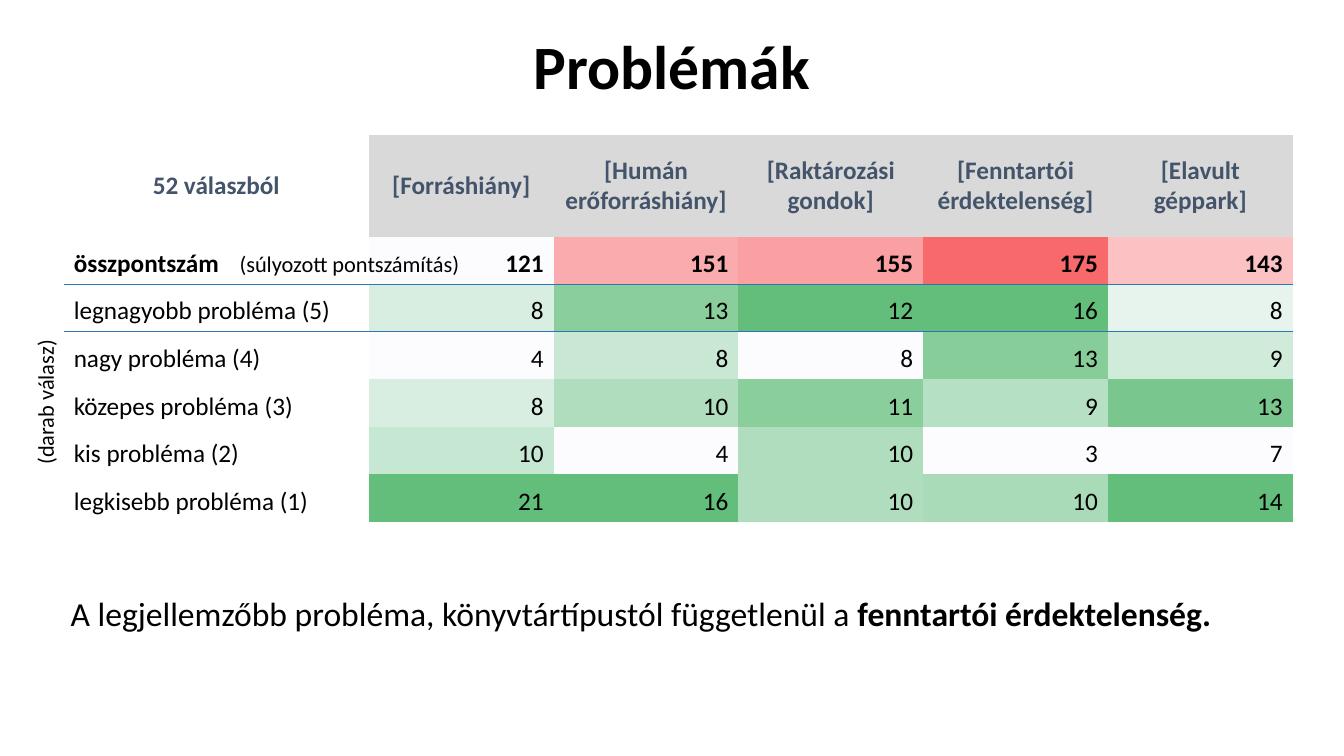
from lxml import etree
from pptx import Presentation
from pptx import util as u
from pptx.dml.color import RGBColor
from pptx.enum import text
from pptx.oxml.ns import qn

PX = 6350  # EMU per px: the page is 1920 x 1080 px
FONT = "Calibri"
BLACK = RGBColor(0x00, 0x00, 0x00)
SLATE = RGBColor(0x44, 0x54, 0x6A)
HEADER_GREY = RGBColor(0xD9, 0xD9, 0xD9)
RULE_BLUE = RGBColor(0x2E, 0x75, 0xB6)
PALE = RGBColor(0xFC, 0xFC, 0xFF)
GREEN = RGBColor(0x63, 0xBE, 0x7B)
RED = RGBColor(0xF8, 0x69, 0x6B)
NO_STYLE_NO_GRID = "{2D5ABB26-0587-4C30-8999-92F81FD0307C}"

LEFT, CENTER, RIGHT = text.PP_ALIGN.LEFT, text.PP_ALIGN.CENTER, text.PP_ALIGN.RIGHT
MIDDLE, BOTTOM = text.MSO_ANCHOR.MIDDLE, text.MSO_ANCHOR.BOTTOM

HEADINGS = ["52 válaszból", "[Forráshiány]", "[Humán erőforráshiány]",
            "[Raktározási gondok]", "[Fenntartói érdektelenség]", "[Elavult géppark]"]
TOTALS = ("összpontszám", [121, 151, 155, 175, 143])
ANSWERS = [
    ("legnagyobb probléma (5)", [8, 13, 12, 16, 8]),
    ("nagy probléma (4)", [4, 8, 8, 13, 9]),
    ("közepes probléma (3)", [8, 10, 11, 9, 13]),
    ("kis probléma (2)", [10, 4, 10, 3, 7]),
    ("legkisebb probléma (1)", [21, 16, 10, 10, 14]),
]


def heat(value, values, strong):
    """Colour between PALE at the least of values and strong at the greatest."""
    low, high = min(values), max(values)
    return RGBColor(*(pale - (pale - full) * (value - low) // (high - low)
                      for pale, full in zip(PALE, strong)))


class SlideBuilder:
    def __init__(self, deck):
        self.page = deck.slides.add_slide(deck.slide_layouts[5])

    def place(self, shape, *frame):
        for name, length in zip(("left", "top", "width", "height"), frame):
            setattr(shape, name, length * PX)

    def add_spans(self, para, spans, size, color=BLACK, **layout):
        """Fill a paragraph with (words, bold) spans."""
        for name, value in layout.items():
            setattr(para, name, value)
        for words, bold in spans:
            span = para.add_run()
            span.text = words
            span.font.color.rgb = color
            for name, value in {"name": FONT, "size": u.Pt(size), "bold": bold}.items():
                setattr(span.font, name, value)

    def title(self, words, *frame):
        box = self.page.shapes.title
        self.place(box, *frame)
        box.text_frame.vertical_anchor = MIDDLE
        self.add_spans(box.text_frame.paragraphs[0], [(words, True)], 44,
                       alignment=CENTER, line_spacing=0.9)

    def label(self, spans, size, *frame, rotation=0, **frame_format):
        box = self.page.shapes.add_textbox(0, 0, 0, 0)
        box.text_frame.auto_size = text.MSO_AUTO_SIZE.SHAPE_TO_FIT_TEXT
        for name, value in frame_format.items():
            setattr(box.text_frame, name, value)
        self.add_spans(box.text_frame.paragraphs[0], spans, size)
        self.place(box, *frame)
        box.rotation = rotation

    def table(self, left, top, column_widths, row_heights):
        frame = self.page.shapes.add_table(
            len(row_heights), len(column_widths), left * PX, top * PX,
            sum(column_widths) * PX, sum(row_heights) * PX)
        table = frame.table
        table.first_row = table.horz_banding = False
        table._tbl.tblPr.find(qn("a:tableStyleId")).text = NO_STYLE_NO_GRID
        for column, width in zip(table.columns, column_widths):
            column.width = width * PX
        for row, height in zip(table.rows, row_heights):
            row.height = height * PX
        return table

    def cell(self, cell, words, fill=None, bold=False, color=BLACK, anchor=BOTTOM, **layout):
        cell.vertical_anchor = anchor
        if fill is None:
            cell.fill.background()
        else:
            cell.fill.solid()
            cell.fill.fore_color.rgb = fill
        self.add_spans(cell.text_frame.paragraphs[0], [(words, bold)], 18, color, **layout)

    def heading_cell(self, cell, words, fill):
        margins = {"margin_left": 6, "margin_right": 6, "margin_top": 0, "margin_bottom": 0}
        for name, length in margins.items():
            setattr(cell, name, length * PX)
        self.cell(cell, words, fill, True, SLATE, MIDDLE, alignment=CENTER)

    def value_row(self, cells, name, values, fills, bold):
        self.cell(cells[0], name, None, bold, alignment=LEFT, line_spacing=1.15)
        for cell, value, fill in zip(cells[1:], values, fills):
            self.cell(cell, str(value), fill, bold, alignment=RIGHT, line_spacing=1.15)

    def border(self, cell, side):
        """Draw one side of a cell: lnT for top, lnB for bottom."""
        line = etree.Element(qn("a:" + side), w=str(u.Pt(1)))
        fill = etree.SubElement(line, qn("a:solidFill"))
        etree.SubElement(fill, qn("a:srgbClr"), val=str(RULE_BLUE))
        cell._tc.get_or_add_tcPr().insert(0, line)


def main():
    deck = Presentation()
    deck.slide_width, deck.slide_height = 1920 * PX, 1080 * PX
    slide = SlideBuilder(deck)
    slide.title("Problémák", 132, 6, 1656, 186)

    table = slide.table(91, 193, [436] + [264] * 5, [145] + [68] * 6)
    heading_cells, total_cells, *answer_rows = [list(row.cells) for row in table.rows]
    for index, (cell, words) in enumerate(zip(heading_cells, HEADINGS)):
        slide.heading_cell(cell, words, HEADER_GREY if index else None)

    name, totals = TOTALS
    slide.value_row(total_cells, name, totals,
                    [heat(total, totals, RED) for total in totals], True)
    columns = list(zip(*(values for _, values in ANSWERS)))
    for cells, (name, values) in zip(answer_rows, ANSWERS):
        fills = [heat(value, column, GREEN) for value, column in zip(values, columns)]
        slide.value_row(cells, name, values, fills, False)
    for upper, lower in zip(total_cells, answer_rows[0]):
        slide.border(upper, "lnB")
        slide.border(lower, "lnT")

    slide.label([("A legjellemzőbb probléma, könyvtártípustól függetlenül a ", False),
                 ("fenntartói érdektelenség.", True)], 24, 91, 841, 1799, 69,
                word_wrap=True, vertical_anchor=MIDDLE, margin_left=10 * PX,
                margin_right=10 * PX, margin_top=6 * PX, margin_bottom=6 * PX)
    slide.label([("(súlyozott pontszámítás)", False)], 16, 328, 350, 347, 53, word_wrap=False)
    slide.label([("(darab válasz)", False)], 16, -40, 547, 209, 53,
                rotation=270, word_wrap=False)
    deck.save("out.pptx")


if __name__ == "__main__":
    main()
